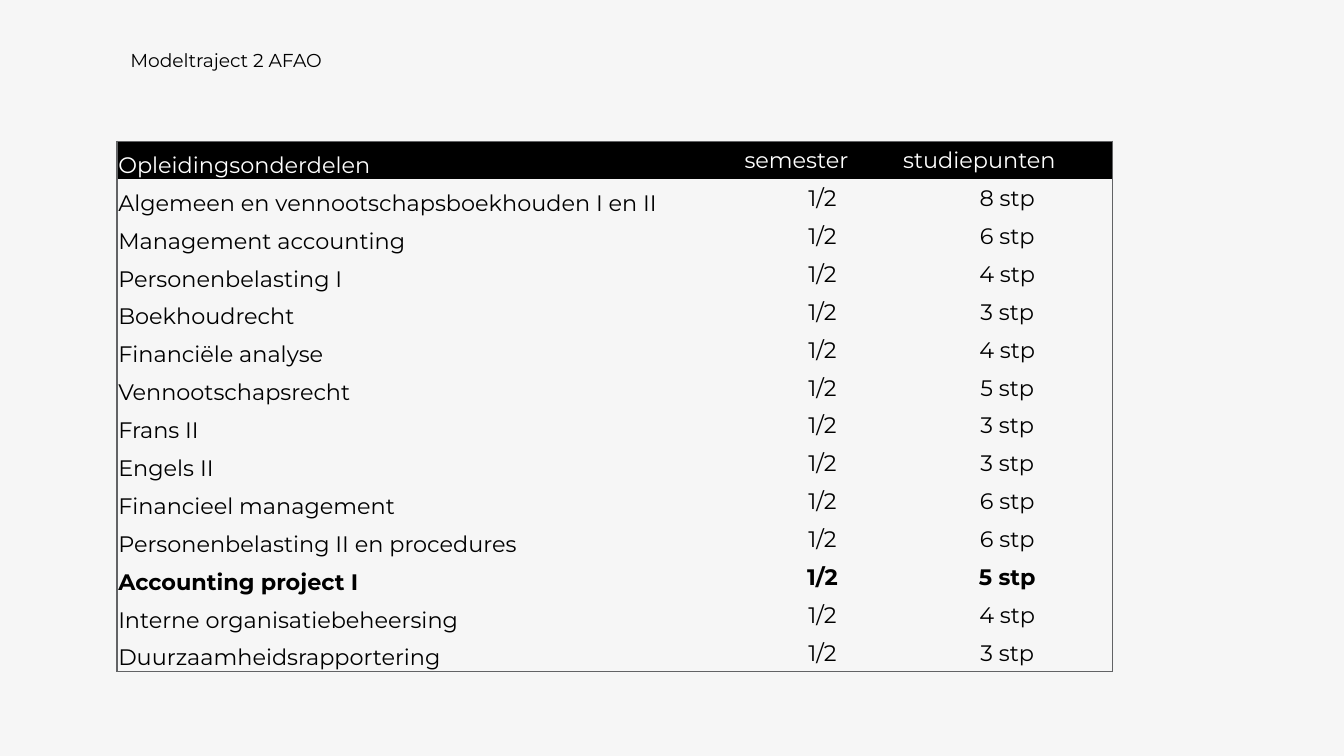
from pptx import Presentation
from pptx.dml.color import RGBColor
from pptx.enum.text import MSO_ANCHOR, PP_ALIGN
from pptx.oxml.ns import qn
from pptx.util import Inches, Pt
from lxml.etree import SubElement

FONT = "Montserrat"
COURSES = [
    ("Algemeen en vennootschapsboekhouden I en II", 8),
    ("Management accounting", 6),
    ("Personenbelasting I", 4),
    ("Boekhoudrecht", 3),
    ("Financiële analyse", 4),
    ("Vennootschapsrecht", 5),
    ("Frans II", 3),
    ("Engels II", 3),
    ("Financieel management", 6),
    ("Personenbelasting II en procedures", 6),
    ("Accounting project I", 5),
    ("Interne organisatiebeheersing", 4),
    ("Duurzaamheidsrapportering", 3),
]
HIGHLIGHT = "Accounting project I"


def color(value):
    return RGBColor.from_string(value)


def set_borders(cell, visible):
    """Draw the sides named in visible (L, R, T, B) and clear the others."""
    properties = cell._tc.get_or_add_tcPr()
    for position, side in enumerate("LRTB"):
        line = SubElement(properties, qn(f"a:ln{side}"), w=str(Pt(0.75)))
        if side in visible:
            fill = SubElement(line, qn("a:solidFill"))
            SubElement(fill, qn("a:srgbClr"), val="626365")
        else:
            SubElement(line, qn("a:noFill"))
        properties.insert(position, line)


deck = Presentation()
deck.slide_width = Inches(10)
deck.slide_height = deck.slide_width * 9 // 16
page = deck.slides.add_slide(deck.slide_layouts[5])
page.background.fill.solid()
page.background.fill.fore_color.rgb = color("F6F6F6")

# Heading
title = page.shapes.title
title.left, title.top = Inches(0.87), Inches(0.31)
title.width, title.height = Inches(4.5), Inches(0.35)
title.text_frame.text = "Modeltraject 2 AFAO"
title.text_frame.vertical_anchor = MSO_ANCHOR.TOP
para = title.text_frame.paragraphs[0]
para.alignment = PP_ALIGN.LEFT
para.font.name, para.font.size = FONT, Pt(10)
para.font.color.rgb = color("000000")

# Course table
rows = [("Opleidingsonderdelen", "semester", "studiepunten")]
rows += [(course, "1/2", f"{points} stp") for course, points in COURSES]
widths = [4.66, 1.18, 1.57]
table = page.shapes.add_table(
    len(rows), len(widths), Inches(0.87), Inches(1.05), Inches(sum(widths)), Inches(3.95)
).table
table.horz_banding = False
for column, width in zip(table.columns, widths):
    column.width = Inches(width)

last_row, last_column = len(rows) - 1, len(widths) - 1
for r, values in enumerate(rows):
    table.rows[r].height = Inches(3.95 / len(rows))
    for c, value in enumerate(values):
        cell = table.cell(r, c)
        cell.text = value
        cell.margin_left = cell.margin_right = cell.margin_top = Inches(0.01)
        cell.margin_bottom = 0
        cell.vertical_anchor = MSO_ANCHOR.BOTTOM if c == 0 else MSO_ANCHOR.MIDDLE
        if r == 0:
            cell.fill.solid()
            cell.fill.fore_color.rgb = color("000000")
        else:
            cell.fill.background()
        edges = {"L": c == 0, "R": c == last_column, "T": r == 0, "B": r == last_row}
        set_borders(cell, [side for side, outer in edges.items() if outer])

        para = cell.text_frame.paragraphs[0]
        para.alignment = PP_ALIGN.CENTER if r and c else PP_ALIGN.LEFT
        para.font.name, para.font.size = FONT, Pt(12)
        para.font.bold = values[0] == HIGHLIGHT
        para.font.color.rgb = color("000000" if r else "FFFFFF")

deck.save("out.pptx")
